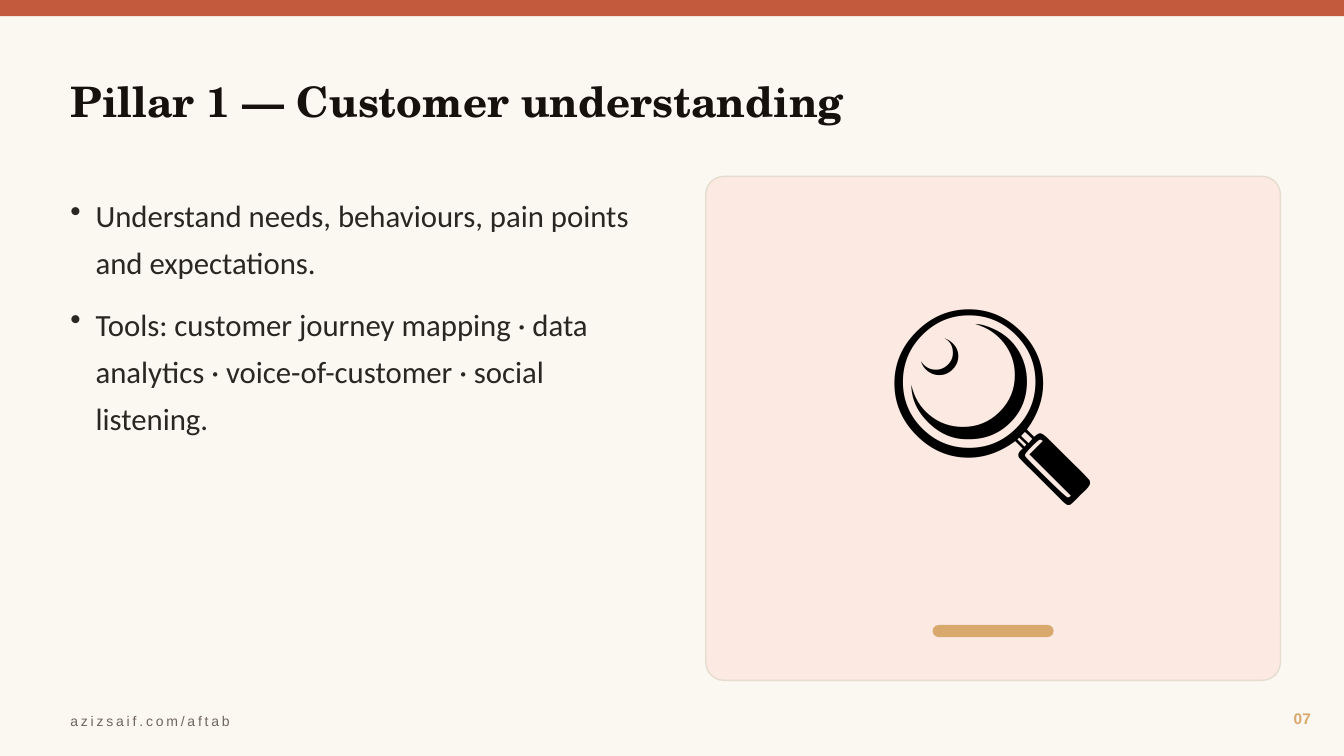
from lxml import etree
from pptx import Presentation
from pptx.dml.color import RGBColor as RGB
from pptx.enum.shapes import MSO_SHAPE as SHAPE
from pptx.enum.text import MSO_ANCHOR as ANCHOR, PP_ALIGN as ALIGN
from pptx.oxml.ns import qn
from pptx.util import Inches, Pt

CELL = Inches(0.1)  # one column or row of the layout grid
COLS, ROWS = 133.3, 75
MARGIN = 6
CARD_X, CARD_Y, CARD_W, CARD_H = 70, 17.5, 57, 50
ACCENT_W = 12
GOLD = "D9A86C"


def add_box(x, y, w, h, kind, fill, line=None, radius=None):
    """Place a filled shape, measured in grid cells."""
    sp = s.shapes.add_shape(kind, *[round(v * CELL) for v in (x, y, w, h)])
    sp.shadow.inherit = False
    sp.fill.solid()
    sp.fill.fore_color.rgb = RGB.from_string(fill)
    if line:
        sp.line.color.rgb = RGB.from_string(line)
        sp.line.width = Pt(1)
    else:
        sp.line.fill.background()
    if radius is not None:
        sp.adjustments[0] = radius


def add_text(x, y, w, h, *lines, size, color, font="Arial", bold=False, align=ALIGN.LEFT,
             anchor=ANCHOR.MIDDLE, bullet=None, leading=None, after=None, tracking=None):
    """Place a text box, measured in grid cells, with one paragraph per line."""
    tf = s.shapes.add_textbox(*[round(v * CELL) for v in (x, y, w, h)]).text_frame
    tf.word_wrap = True
    tf.vertical_anchor = anchor
    for i, line in enumerate(lines):
        p = tf.add_paragraph() if i else tf.paragraphs[0]
        p.alignment = align
        if leading:
            p.line_spacing = leading
        if after:
            p.space_after = Pt(after)
        if bullet:
            pPr = p._p.get_or_add_pPr()
            indent = Inches(0.25)
            pPr.set("marL", str(indent))
            pPr.set("indent", str(-indent))
            etree.SubElement(pPr, qn("a:buChar")).set("char", bullet)
        r = p.add_run()
        r.text = line
        r.font.name, r.font.size, r.font.bold = font, Pt(size), bold
        r.font.color.rgb = RGB.from_string(color)
        if tracking:
            r._r.get_or_add_rPr().set("spc", str(tracking * 100))


prs = Presentation()
prs.slide_width, prs.slide_height = round(COLS * CELL), ROWS * CELL
s = prs.slides.add_slide(prs.slide_layouts[6])
s.background.fill.solid()
s.background.fill.fore_color.rgb = RGB.from_string("FBF7F1")

# Header
add_box(0, 0, COLS, 1.6, SHAPE.RECTANGLE, "C45A3D")
add_text(MARGIN, 5, 121, 10, "Pillar 1 — Customer understanding",
         size=30, color="16110D", font="TeX Gyre Schola", bold=True)

# Illustration card
add_box(CARD_X, CARD_Y, CARD_W, CARD_H, SHAPE.ROUNDED_RECTANGLE, "FBE9E2", "E4DDD0", 0.036)
add_text(CARD_X, CARD_Y, CARD_W, 41, "🔍",
         size=150, color="000000", font="Calibri", align=ALIGN.CENTER)
add_box(CARD_X + (CARD_W - ACCENT_W) / 2, 62, ACCENT_W, 1.2,
        SHAPE.ROUNDED_RECTANGLE, GOLD, radius=0.5)

# Key points
add_text(MARGIN, 18, 60, 50,
         "Understand needs, behaviours, pain points and expectations.",
         "Tools: customer journey mapping · data analytics · voice-of-customer · social listening.",
         size=22, color="2A2622", font="Calibri", anchor=ANCHOR.TOP,
         bullet="•", leading=1.28, after=10)

# Footer
add_text(122, 69.5, 9, 3.5, "07", size=11, color=GOLD, bold=True, align=ALIGN.RIGHT)
add_text(MARGIN, 70, 80, 3, "azizsaif.com/aftab", size=10, color="6E665C", tracking=2)

prs.save("out.pptx")
